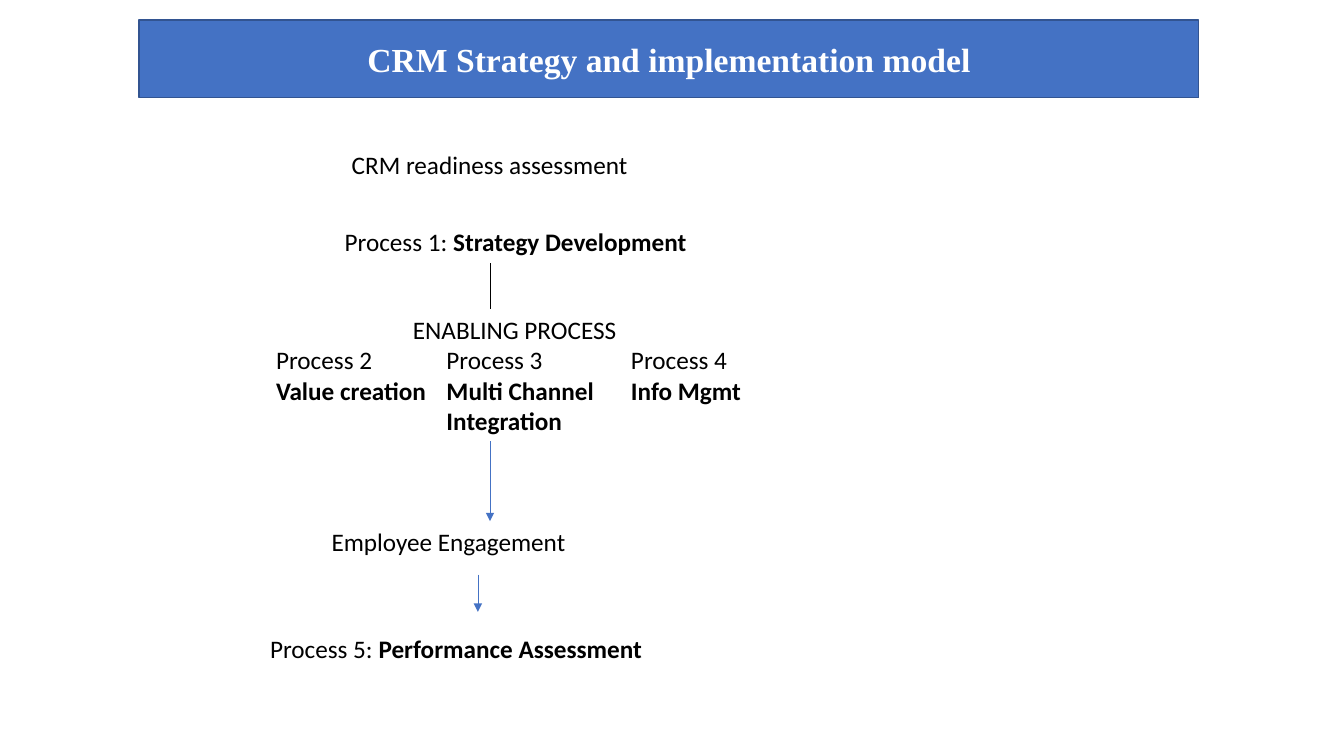
from dataclasses import dataclass

from lxml.etree import SubElement
from pptx import Presentation
from pptx.dml.color import RGBColor
from pptx.enum.shapes import MSO_CONNECTOR
from pptx.enum.text import MSO_ANCHOR, PP_ALIGN
from pptx.oxml.ns import qn
from pptx.slide import Slide
from pptx.util import Inches, Pt


@dataclass(frozen=True)
class Theme:
    title_font: str = "Times New Roman"
    body_font: str = "Calibri"
    title_size: int = 24
    body_size: int = 18
    ink: RGBColor = RGBColor(0x00, 0x00, 0x00)
    white: RGBColor = RGBColor(0xFF, 0xFF, 0xFF)
    blue: RGBColor = RGBColor(0x44, 0x72, 0xC4)
    dark_blue: RGBColor = RGBColor(0x32, 0x54, 0x91)


@dataclass(frozen=True)
class Line:
    plain: str = ""
    bold: str = ""
    align: PP_ALIGN = PP_ALIGN.LEFT


@dataclass(frozen=True)
class Stage:
    left: float
    top: float
    width: float
    height: float
    lines: tuple[Line, ...]
    tabs: tuple[float, ...] = ()


@dataclass(frozen=True)
class Link:
    x: float
    top: float
    bottom: float
    color: RGBColor
    arrow: bool = True


THEME = Theme()
TITLE = "CRM Strategy and implementation model"

STAGES = (
    Stage(3.39, 1.43, 3.28, 0.4, (Line("CRM readiness assessment"),)),
    Stage(3.32, 2.2, 3.75, 0.4, (Line("Process 1: ", "Strategy Development"),)),
    Stage(2.64, 3.07, 4.93, 1.31, (
        Line("ENABLING PROCESS", align=PP_ALIGN.CENTER),
        Line("Process 2\tProcess 3\tProcess 4"),
        Line(bold="Value creation\tMulti Channel\tInfo Mgmt"),
        Line(bold="\tIntegration"),
    ), tabs=(1.69, 3.52)),
    Stage(3.19, 5.17, 3.83, 0.4, (Line("Employee Engagement"),)),
    Stage(2.58, 6.23, 5.23, 0.4, (Line("Process 5: ", "Performance Assessment"),)),
)

LINKS = (
    Link(4.86, 2.61, 3.07, THEME.ink, arrow=False),
    Link(4.86, 4.38, 5.17, THEME.blue),
    Link(4.74, 5.7, 6.07, THEME.blue),
)


def format_title(slide: Slide) -> None:
    banner = slide.shapes.title
    banner.left, banner.top = Inches(1.38), Inches(0.2)
    banner.width, banner.height = Inches(10.51), Inches(0.77)
    banner.fill.solid()
    banner.fill.fore_color.rgb = THEME.blue
    banner.line.color.rgb = THEME.dark_blue
    banner.line.width = Pt(1)
    banner.text_frame.text = TITLE
    banner.text_frame.vertical_anchor = MSO_ANCHOR.MIDDLE
    heading = banner.text_frame.paragraphs[0]
    heading.alignment = PP_ALIGN.CENTER
    heading.font.name = THEME.title_font
    heading.font.size = Pt(THEME.title_size)
    heading.font.bold = True
    heading.font.color.rgb = THEME.white


def add_stage(slide: Slide, stage: Stage) -> None:
    box = slide.shapes.add_textbox(
        Inches(stage.left), Inches(stage.top), Inches(stage.width), Inches(stage.height))
    frame = box.text_frame
    frame.word_wrap = True
    for index, line in enumerate(stage.lines):
        paragraph = frame.add_paragraph() if index else frame.paragraphs[0]
        paragraph.alignment = line.align
        # Tab stops hold the process columns
        if stage.tabs:
            tab_list = SubElement(paragraph._p.get_or_add_pPr(), qn("a:tabLst"))
            for position in stage.tabs:
                SubElement(tab_list, qn("a:tab"), pos=str(Inches(position)), algn="l")
        paragraph.font.name = THEME.body_font
        paragraph.font.size = Pt(THEME.body_size)
        paragraph.font.color.rgb = THEME.ink
        if line.plain:
            paragraph.add_run().text = line.plain
        if line.bold:
            emphasis = paragraph.add_run()
            emphasis.text = line.bold
            emphasis.font.bold = True


def add_link(slide: Slide, link: Link) -> None:
    connector = slide.shapes.add_connector(
        MSO_CONNECTOR.STRAIGHT,
        Inches(link.x), Inches(link.top), Inches(link.x), Inches(link.bottom))
    connector.line.color.rgb = link.color
    connector.line.width = Pt(0.5)
    if link.arrow:
        SubElement(connector.line._get_or_add_ln(), qn("a:tailEnd"), type="triangle")
    SubElement(connector._element.spPr, qn("a:effectLst"))


def main() -> None:
    presentation = Presentation()
    presentation.slide_width = Inches(13.33)
    presentation.slide_height = Inches(7.5)
    slide = presentation.slides.add_slide(presentation.slide_layouts.get_by_name("Title Only"))

    # Title banner
    format_title(slide)

    # Process stages from top to bottom
    for stage in STAGES:
        add_stage(slide, stage)

    # Links between the stages
    for link in LINKS:
        add_link(slide, link)

    presentation.save("out.pptx")


if __name__ == "__main__":
    main()
